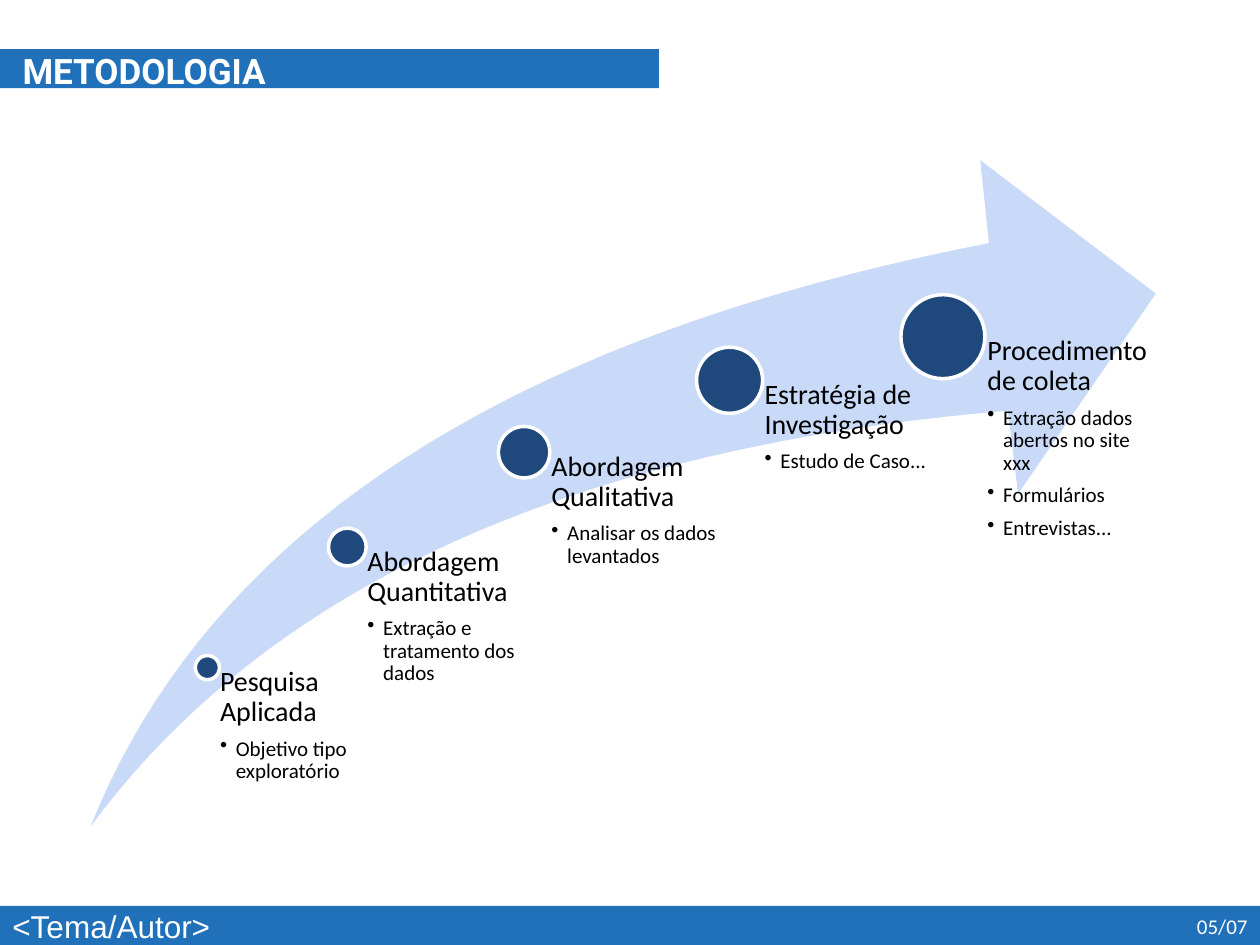
"""Build the methodology slide: a rising arrow with five research steps."""
from dataclasses import dataclass

from lxml.etree import SubElement
from pptx import Presentation
from pptx.dml.color import RGBColor as RGB
from pptx.enum.shapes import MSO_SHAPE as Shape
from pptx.enum.text import MSO_ANCHOR as Anchor, MSO_AUTO_SIZE as Fit, PP_ALIGN as Align
from pptx.oxml.ns import qn
from pptx.util import Pt

TITLE, FOOTER, PAGE = "METODOLOGIA", "<Tema/Autor>", "05/07"
STEPS = [
    ("Pesquisa Aplicada", ["Objetivo tipo exploratório"], (118.5, 381.5), 13.8, 80),
    ("Abordagem Quantitativa", ["Extração e tratamento dos dados"], (198.5, 312.6), 21.6, 101),
    ("Abordagem Qualitativa", ["Analisar os dados levantados"], (299.5, 258.4), 29.4, 117.5),
    ("Estratégia de Investigação", ["Estudo de Caso..."], (416.9, 217.3), 37.8, 121.7),
    ("Procedimento de coleta",
     ["Extração dados abertos no site xxx", "Formulários", "Entrevistas..."],
     (538.8, 192.4), 48, 121.7),
]
TAIL = (51.8, 472.3)
UPPER = [TAIL, (119.5, 303.1), (290.9, 192.2), (565.2, 139)]
HEAD = [(560.2, 91.6), (660.5, 167.8), (581.8, 282.2)]
LOWER = [(576, 234.7), (328.3, 255.6), (153.4, 334.8), TAIL]


@dataclass(frozen=True)
class Theme:
    """Colours, fonts and type sizes."""
    bar: str = "2071BA"
    swoosh: str = "C9DAF8"
    dot: str = "1F497D"
    light: str = "FFFFFF"
    ink: str = "000000"
    body: str = "Calibri"
    head: str = "Roboto"
    foot: str = "Arial"
    title: float = 20
    footer: float = 18
    step: float = 16
    small: float = 12


T = Theme()


def paint(shape, fill, line=None):
    """Set the fill and the outline of a shape."""
    shape.shadow.inherit = False
    shape.fill.solid()
    shape.fill.fore_color.rgb = RGB.from_string(fill)
    if line:
        shape.line.color.rgb = RGB.from_string(line)
        shape.line.width = Pt(2)
    else:
        shape.line.fill.background()
    return shape


def write(para, text, size, color, font, bold=False):
    """Add one styled run to a paragraph."""
    run = para.add_run()
    run.text = text
    run.font.size, run.font.name, run.font.bold = Pt(size), font, bold
    run.font.color.rgb = RGB.from_string(color)


def box(shapes, x, y, w, h):
    """Add a wrapping text box and return its frame."""
    frame = shapes.add_textbox(Pt(x), Pt(y), Pt(w), Pt(h)).text_frame
    frame.word_wrap = True
    return frame


def label(shapes, area, text, size, font, align, bold=False):
    """Add a one-line label in light type."""
    frame = box(shapes, *area)
    frame.auto_size = Fit.SHAPE_TO_FIT_TEXT
    para = frame.paragraphs[0]
    para.alignment = align
    write(para, text, size, T.light, font, bold)


def bar(shapes, y, w):
    """Add a coloured band from the left edge."""
    return paint(shapes.add_shape(Shape.RECTANGLE, 0, Pt(y), Pt(w), Pt(22.3)), T.bar)


def curve(ends, count=40):
    """Return points along a cubic curve."""
    a, b, c, d = ends
    rates = [i / count for i in range(count + 1)]
    return [tuple((1 - t) ** 3 * p + 3 * (1 - t) ** 2 * t * q
                  + 3 * (1 - t) * t * t * r + t ** 3 * s
                  for p, q, r, s in zip(a, b, c, d)) for t in rates]


def arrow(shapes):
    """Draw the curved arrow."""
    first, *rest = [(Pt(x), Pt(y)) for x, y in curve(UPPER) + HEAD + curve(LOWER)]
    form = shapes.build_freeform(*first, scale=1.0)
    form.add_line_segments(rest, close=True)
    paint(form.convert_to_shape(), T.swoosh)


def bullet(para):
    """Give a paragraph a hanging bullet."""
    para.level = 1
    para.space_before = Pt(5.6)
    props = para._p.get_or_add_pPr()
    props.set("marL", str(Pt(9)))
    props.set("indent", str(-Pt(9)))
    tint = SubElement(props, qn("a:buClr"))
    SubElement(tint, qn("a:srgbClr"), val=T.ink)
    SubElement(props, qn("a:buChar"), char="•")


def step(shapes, name, notes, mid, size, width):
    """Add a dot and the text that hangs from its centre."""
    x, y = mid
    paint(shapes.add_shape(Shape.OVAL, Pt(x - size / 2), Pt(y - size / 2),
                           Pt(size), Pt(size)), T.dot, T.light)
    frame = box(shapes, x, y, width, TAIL[1] - y)
    frame.margin_left = Pt(size * 0.53)
    frame.margin_top = frame.margin_right = frame.margin_bottom = 0
    para = frame.paragraphs[0]
    para.line_spacing = 0.9
    write(para, name, T.step, T.ink, T.body)
    for note in notes:
        para = frame.add_paragraph()
        para.line_spacing = 0.9
        bullet(para)
        write(para, note, T.small, T.ink, T.body)


def main():
    """Build and save the slide."""
    deck = Presentation()
    deck.slide_width, deck.slide_height = Pt(720), Pt(540)
    shapes = deck.slides.add_slide(deck.slide_layouts[6]).shapes
    frame = bar(shapes, 517.7, 720).text_frame
    frame.vertical_anchor = Anchor.MIDDLE
    frame.paragraphs[0].alignment = Align.LEFT
    write(frame.paragraphs[0], FOOTER, T.footer, T.light, T.foot)
    bar(shapes, 28.1, 376.6)
    label(shapes, (5.8, 24.5, 360, 31.7), TITLE, T.title, T.head, Align.JUSTIFY, True)
    label(shapes, (663.8, 518.4, 56.2, 21.6), PAGE, T.small, T.body, Align.RIGHT)
    group = shapes.add_group_shape().shapes
    arrow(group)
    for item in STEPS:
        step(group, *item)
    deck.save("out.pptx")


if __name__ == "__main__":
    main()
